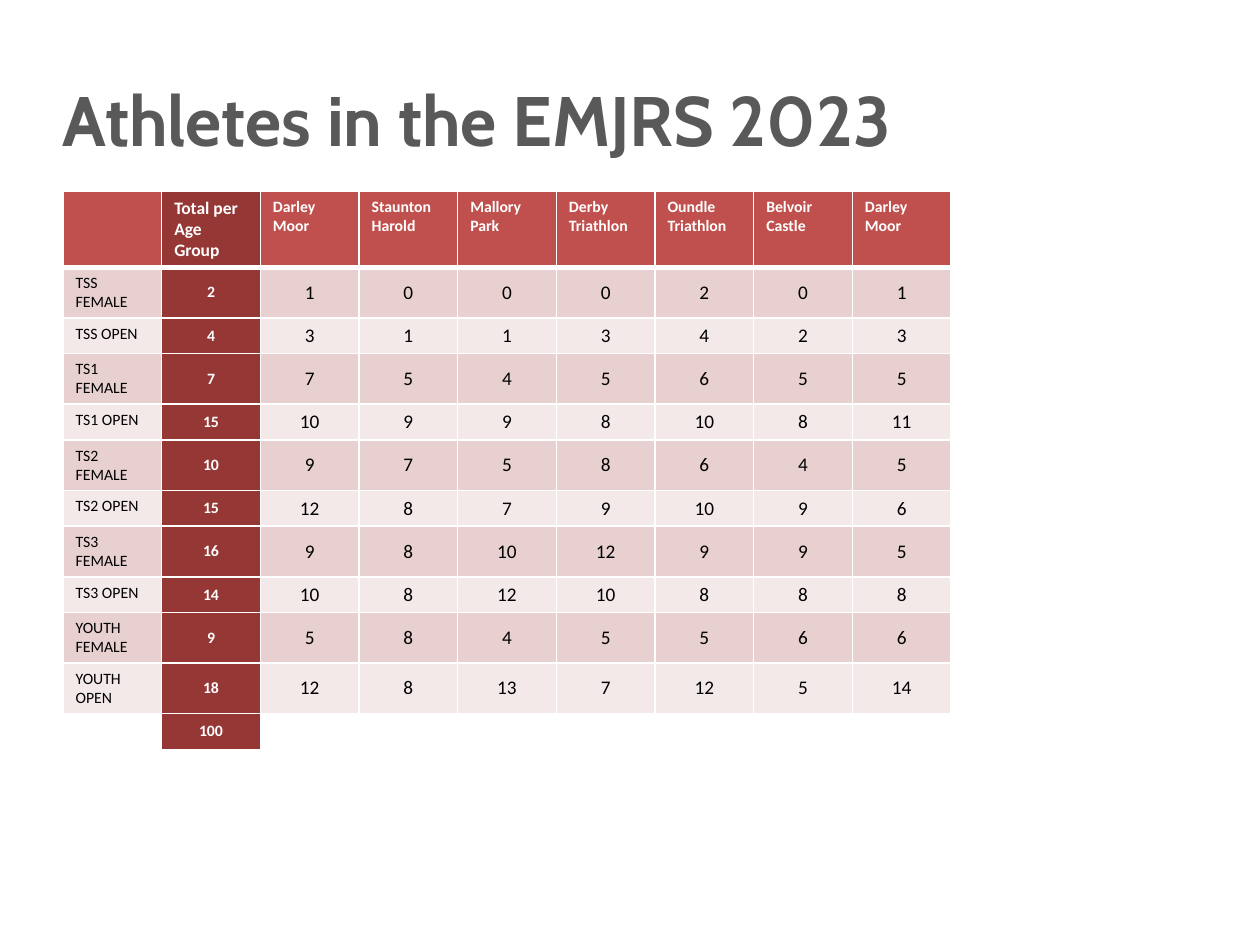
from typing import NamedTuple

from lxml import etree
from pptx import Presentation
from pptx import util as u
from pptx.dml.color import RGBColor
from pptx.enum import text as t
from pptx.oxml.ns import qn


class Group(NamedTuple):
    name: str
    total: int
    counts: tuple


RED, DARK, WHITE, BLACK, GREY = "C0504D", "953735", "FFFFFF", "000000", "595959"
BANDS = ("E8D0D0", "F4E9E9")
MID, CENTER = t.MSO_ANCHOR.MIDDLE, t.PP_ALIGN.CENTER

VENUES = ("Darley Moor", "Staunton Harold", "Mallory Park", "Derby Triathlon",
          "Oundle Triathlon", "Belvoir Castle", "Darley Moor")
GROUPS = (
    Group("TSS FEMALE", 2, (1, 0, 0, 0, 2, 0, 1)),
    Group("TSS OPEN", 4, (3, 1, 1, 3, 4, 2, 3)),
    Group("TS1 FEMALE", 7, (7, 5, 4, 5, 6, 5, 5)),
    Group("TS1 OPEN", 15, (10, 9, 9, 8, 10, 8, 11)),
    Group("TS2 FEMALE", 10, (9, 7, 5, 8, 6, 4, 5)),
    Group("TS2 OPEN", 15, (12, 8, 7, 9, 10, 9, 6)),
    Group("TS3 FEMALE", 16, (9, 8, 10, 12, 9, 9, 5)),
    Group("TS3 OPEN", 14, (10, 8, 12, 10, 8, 8, 8)),
    Group("YOUTH FEMALE", 9, (5, 8, 4, 5, 5, 6, 6)),
    Group("YOUTH OPEN", 18, (12, 8, 13, 7, 12, 5, 14)),
)


def paint(fmt, color: str) -> None:
    fmt.rgb = RGBColor.from_string(color)


def write(frame, words: str, *, size: int = 9, color: str = BLACK,
          bold: bool = False, face: str = "Calibri", align=None, gap=None) -> None:
    para = frame.paragraphs[0]
    para.alignment = align
    para.line_spacing = gap
    if not words:
        etree.SubElement(para._p, qn("a:endParaRPr"), sz=str(size * 100))
        return
    run = para.add_run()
    run.text = words
    font = run.font
    font.size, font.bold, font.name = u.Pt(size), bold, face
    paint(font.color, color)


def edge(cell, sides: dict) -> None:
    props = cell._tc.get_or_add_tcPr()
    for side, width in sides.items():
        line = etree.SubElement(props, qn(f"a:ln{side}"), w=str(u.Pt(width)))
        fill = etree.SubElement(line, qn("a:solidFill"))
        etree.SubElement(fill, qn("a:srgbClr"), val=WHITE)


def draw_cell(cell, words: str, fill: str, sides: dict, anchor=None, **style) -> None:
    edge(cell, sides)
    cell.fill.solid()
    paint(cell.fill.fore_color, fill)
    cell.vertical_anchor = anchor
    write(cell.text_frame, words, **style)


def draw_row(table, row: int, group: Group, fill: str) -> None:
    sides = {"L": 1, "R": 1, "B": 1}
    draw_cell(table.cell(row, 0), group.name, fill, sides)
    draw_cell(table.cell(row, 1), str(group.total), DARK, sides, MID,
              color=WHITE, bold=True, align=CENTER)
    for col, count in enumerate(group.counts, 2):
        draw_cell(table.cell(row, col), str(count), fill, sides, MID,
                  size=11, align=CENTER)


def draw_table(slide) -> None:
    rows, cols = len(GROUPS) + 2, len(VENUES) + 2
    table = slide.shapes.add_table(rows, cols, u.Inches(0.5), u.Inches(1.52),
                                   u.Inches(7.05), u.Inches(3.49)).table
    for row in table.rows:
        row.height = u.Inches(0.28)
    table.rows[0].height = u.Inches(0.41)

    for col, name in enumerate(("", "Total per Age Group") + VENUES):
        total = col == 1
        draw_cell(table.cell(0, col), name, DARK if total else RED,
                  {"L": 1, "R": 1, "T": 1, "B": 3},
                  size=10 if total else 9, color=WHITE, bold=True)
    for row, group in enumerate(GROUPS, 1):
        draw_row(table, row, group, BANDS[(row - 1) % 2])
    whole = Group("", sum(g.total for g in GROUPS), ("",) * len(VENUES))
    whole = whole._replace(total=100) if whole.total != 100 else whole
    draw_row(table, rows - 1, whole, WHITE)


def draw_title(slide) -> None:
    frame = slide.shapes.add_textbox(u.Inches(0.5), u.Inches(0.38),
                                     u.Inches(9), u.Inches(1.25)).text_frame
    frame.word_wrap = True
    frame.margin_left = 0
    frame.vertical_anchor = MID
    write(frame, "Athletes in the EMJRS 2023", size=40, color=GREY,
          bold=True, face="Cabin", gap=0.8)


def main() -> None:
    deck = Presentation()
    deck.slide_width, deck.slide_height = u.Inches(10), u.Inches(7.5)
    slide = deck.slides.add_slide(deck.slide_layouts[6])
    draw_title(slide)
    draw_table(slide)
    deck.save("out.pptx")


if __name__ == "__main__":
    main()
